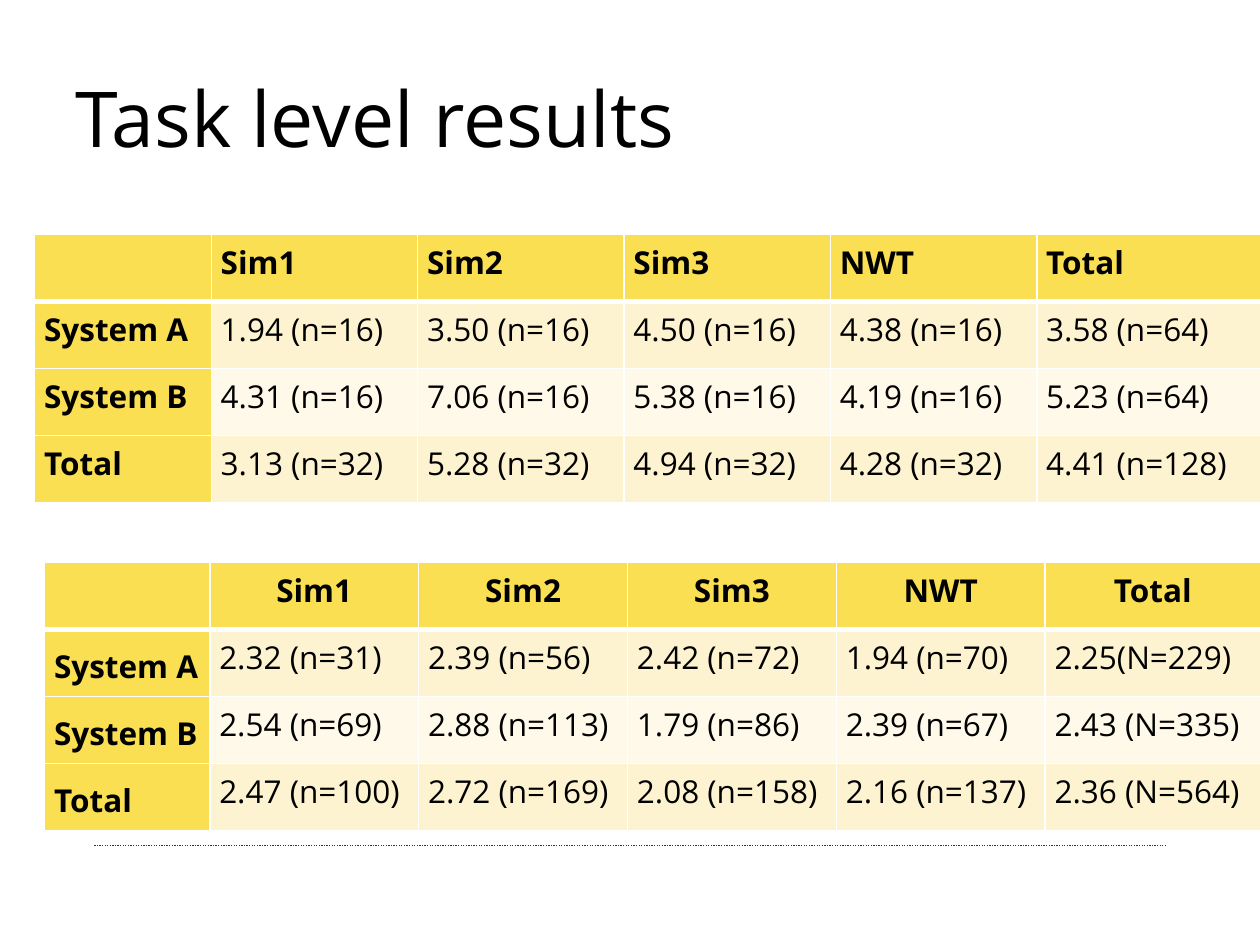
from lxml.etree import SubElement
from pptx import Presentation
from pptx.dml.color import RGBColor
from pptx.enum.dml import MSO_LINE
from pptx.enum.shapes import MSO_CONNECTOR
from pptx.enum.text import MSO_ANCHOR, PP_ALIGN
from pptx.oxml.ns import qn
from pptx.util import Cm, Pt

FONT = "Open Sans"
COLORS = {"text": "000000", "rule": "333333", "edge": "FFFFFF",
          "head": "FBDF53", "odd": "FDF3D1", "even": "FEF9E9"}
TITLE = "Task level results"
HEADS = ["", "Sim1", "Sim2", "Sim3", "NWT", "Total"]
ROW = 1.35

TABLES = [
    {"left": 0.7, "top": 4.73, "cols": [3.56] + [4.16] * 4 + [4.52],
     "head": PP_ALIGN.JUSTIFY, "body": PP_ALIGN.JUSTIFY, "side": MSO_ANCHOR.TOP,
     "rows": [
         ["System A", "1.94 (n=16)", "3.50 (n=16)", "4.50 (n=16)", "4.38 (n=16)", "3.58 (n=64)"],
         ["System B", "4.31 (n=16)", "7.06 (n=16)", "5.38 (n=16)", "4.19 (n=16)", "5.23 (n=64)"],
         ["Total", "3.13 (n=32)", "5.28 (n=32)", "4.94 (n=32)", "4.28 (n=32)", "4.41 (n=128)"],
     ]},
    {"left": 0.9, "top": 11.34, "cols": [3.33] + [4.21] * 4 + [4.34],
     "head": PP_ALIGN.CENTER, "body": PP_ALIGN.LEFT, "side": MSO_ANCHOR.MIDDLE,
     "rows": [
         ["System A", "2.32 (n=31)", "2.39 (n=56)", "2.42 (n=72)", "1.94 (n=70)", "2.25(N=229)"],
         ["System B", "2.54 (n=69)", "2.88 (n=113)", "1.79 (n=86)", "2.39 (n=67)", "2.43 (N=335)"],
         ["Total", "2.47 (n=100)", "2.72 (n=169)", "2.08 (n=158)", "2.16 (n=137)", "2.36 (N=564)"],
     ]},
]


def color(name):
    return RGBColor.from_string(COLORS[name])


def add_run(para, text, size, bold=False):
    run = para.add_run()
    run.text = text
    run.font.name = FONT
    run.font.size = Pt(size)
    run.font.bold = bold
    run.font.color.rgb = color("text")


def set_edges(cell, row):
    """Draw white cell borders, thick between the header and the body."""
    props = cell._tc.get_or_add_tcPr()
    thick = {(0, "B"), (1, "T")}
    for side in "LRTB":
        width = Pt(3 if (row, side) in thick else 1)
        line = SubElement(props, qn(f"a:ln{side}"), w=str(width))
        fill = SubElement(line, qn("a:solidFill"))
        SubElement(fill, qn("a:srgbClr"), val=COLORS["edge"])


def add_rule(slide):
    rule = slide.shapes.add_connector(
        MSO_CONNECTOR.STRAIGHT, Cm(1.9), Cm(17.04), Cm(23.5), Cm(17.04))
    rule.line.color.rgb = color("rule")
    rule.line.width = Pt(0.75)
    rule.line.dash_style = MSO_LINE.ROUND_DOT
    SubElement(rule._element.spPr, qn("a:effectLst"))


def add_title(slide):
    box = slide.shapes.add_textbox(Cm(1.27), Cm(0.76), Cm(22.86), Cm(3.18))
    frame = box.text_frame
    frame.word_wrap = True
    frame.vertical_anchor = MSO_ANCHOR.MIDDLE
    add_run(frame.paragraphs[0], TITLE, 44)


def fill_cell(cell, text, row, col, data):
    side = row > 0 and col == 0
    set_edges(cell, row)
    tone = "head" if row == 0 or side else "odd" if row % 2 else "even"
    cell.fill.solid()
    cell.fill.fore_color.rgb = color(tone)
    cell.margin_left = cell.margin_right = Cm(0.19)
    cell.margin_top = cell.margin_bottom = 0
    cell.vertical_anchor = data["side"] if side else MSO_ANCHOR.TOP
    if text:
        para = cell.text_frame.paragraphs[0]
        para.alignment = data["body"] if row else data["head"]
        para.line_spacing = 1.15
        add_run(para, text, 18, tone == "head")


def add_grid(slide, data):
    rows = [HEADS] + data["rows"]
    table = slide.shapes.add_table(
        len(rows), len(HEADS), Cm(data["left"]), Cm(data["top"]),
        Cm(sum(data["cols"])), Cm(ROW * len(rows))).table
    for col, width in zip(table.columns, data["cols"]):
        col.width = Cm(width)
    for r, texts in enumerate(rows):
        table.rows[r].height = Cm(ROW)
        for c, text in enumerate(texts):
            fill_cell(table.cell(r, c), text, r, c, data)


def main():
    deck = Presentation()
    deck.slide_width, deck.slide_height = Cm(25.4), Cm(19.05)
    slide = deck.slides.add_slide(deck.slide_layouts[6])
    add_rule(slide)
    add_title(slide)
    for data in TABLES:
        add_grid(slide, data)
    deck.save("out.pptx")


if __name__ == "__main__":
    main()
